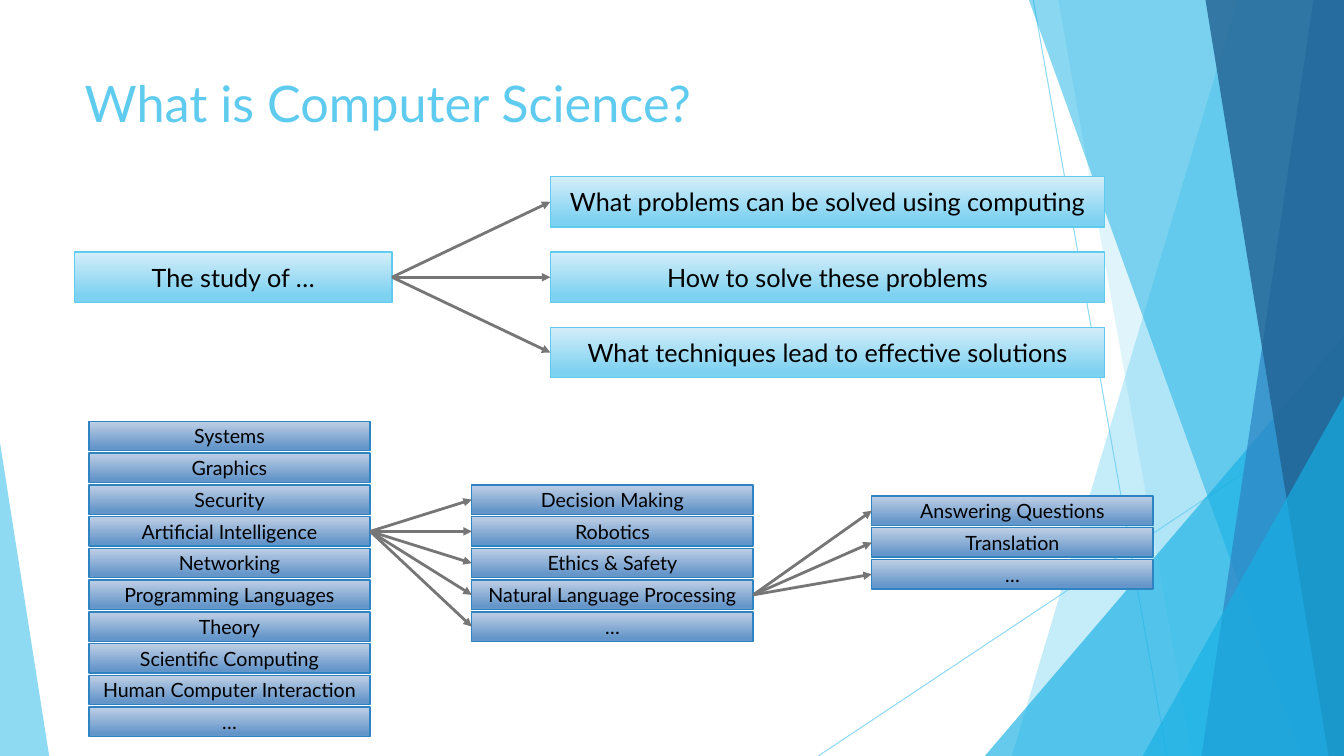
from lxml.etree import SubElement as add_sub
from pptx import Presentation
from pptx.dml.color import RGBColor
from pptx.enum.shapes import MSO_CONNECTOR as Link, MSO_SHAPE as Preset
from pptx.enum.text import MSO_ANCHOR as Anchor, PP_ALIGN as Align
from pptx.oxml.ns import qn
from pptx.util import Cm, Pt

WIDE, HIGH = 33.87, 19.05
SKY, AQUA, BLUE, NAVY = "5FCBEF", "17B0E4", "2E83C3", "226292"
rgb = RGBColor.from_string


def fade(shape, alpha):
    """Make every colour of the shape partly clear, alpha in percent."""
    for color in list(shape.element.spPr.iter(qn("a:srgbClr"))):
        add_sub(color, qn("a:alpha"), val=str(alpha * 1000))


def draw_line(start, end, color, width):
    line = shapes.add_connector(Link.STRAIGHT, *map(Cm, start + end))
    line.line.color.rgb = rgb(color)
    line.line.width = Pt(width)
    add_sub(line.element.spPr, qn("a:effectLst"))
    return line


deck = Presentation()
deck.slide_width, deck.slide_height = Cm(WIDE), Cm(HIGH)
slide = deck.slides.add_slide(deck.slide_layouts[5])
shapes = slide.shapes

# Backdrop: thin lines, then panels (top x, bottom x)
# and wedges (left, top, width, tip)
for start, end in [((26.04, 0), (29.41, HIGH)), ((WIDE, 10.24), (20.62, HIGH))]:
    fade(draw_line(start, end, SKY, 0.75), 70)

backdrop = [
    ("panel", (31.19, 25.5), SKY, 36),
    ("panel", (26.67, 30.05), SKY, 20),
    ("wedge", (24.82, 8.46, 9.05, 1), AQUA, 66),
    ("panel", (25.93, 32.79), AQUA, 50),
    ("panel", (33.1, 30.28), BLUE, 70),
    ("panel", (30.38, 33.48), NAVY, 80),
    ("wedge", (28.8, 9.98, 5.07, 1), AQUA, 66),
    ("wedge", (0, 11.15, 1.24, 0), SKY, 70),
]
for kind, place, color, alpha in backdrop:
    if kind == "panel":
        top, foot = place
        pen = shapes.build_freeform(Cm(top), 0)
        ends = [(WIDE, 0), (WIDE, HIGH), (foot, HIGH)]
        pen.add_line_segments([(Cm(x), Cm(y)) for x, y in ends])
        part = pen.convert_to_shape()
    else:
        left, top, width, tip = place
        size = map(Cm, (left, top, width, HIGH - top))
        part = shapes.add_shape(Preset.ISOSCELES_TRIANGLE, *size)
        part.adjustments[0] = tip
    part.shadow.inherit = False
    part.fill.solid()
    part.fill.fore_color.rgb = rgb(color)
    part.line.fill.background()
    fade(part, alpha)

# Title
title = shapes.title
spot = {"left": 1.88, "top": 1.7, "width": 23.88, "height": 3.66}
for key, value in spot.items():
    setattr(title, key, Cm(value))
title.text_frame.text = "What is Computer Science?"
title.text_frame.vertical_anchor = Anchor.TOP
title.text_frame.paragraphs[0].alignment = Align.LEFT
font = title.text_frame.paragraphs[0].runs[0].font
for key, value in {"name": "Lato", "size": Pt(36)}.items():
    setattr(font, key, value)
font.color.rgb = rgb(SKY)

# Box columns
light = {"high": 1.27, "step": 1.9, "size": 18,
         "line": SKY, "fade": ("D4EEF9", "7DD1F1")}
dark = {"high": 0.74, "step": 0.8, "size": 14,
        "line": BLUE, "fade": ("BFCFE5", "6596CA")}
columns = {
    "study": (light, 1.88, 6.35, 8, ["The study of …"]),
    "goals": (light, 13.87, 4.45, 13.97, [
        "What problems can be solved using computing",
        "How to solve these problems",
        "What techniques lead to effective solutions"]),
    "fields": (dark, 2.24, 10.62, 7.09, [
        "Systems", "Graphics", "Security", "Artificial Intelligence",
        "Networking", "Programming Languages", "Theory",
        "Scientific Computing", "Human Computer Interaction", "…"]),
    "topics": (dark, 11.89, 12.22, 7.09, [
        "Decision Making", "Robotics", "Ethics & Safety",
        "Natural Language Processing", "…"]),
    "tasks": (dark, 21.97, 12.5, 7.09, [
        "Answering Questions", "Translation", "…"]),
}
boxes = {}
for name, (look, left, top, width, labels) in columns.items():
    boxes[name] = []
    for row, label in enumerate(labels):
        size = map(Cm, (left, top + row * look["step"], width, look["high"]))
        box = shapes.add_shape(Preset.RECTANGLE, *size)
        box.shadow.inherit = False
        box.fill.gradient()
        box.fill.gradient_angle = 270
        for stop, color, point in zip(box.fill.gradient_stops, look["fade"], (0, 0.88)):
            stop.color.rgb = rgb(color)
            stop.position = point
        box.line.color.rgb = rgb(look["line"])
        box.line.width = Pt(1)
        frame = box.text_frame
        frame.text = label
        frame.vertical_anchor = Anchor.MIDDLE
        frame.paragraphs[0].alignment = Align.CENTER
        font = frame.paragraphs[0].runs[0].font
        for key, value in {"name": "Lato", "size": Pt(look["size"])}.items():
            setattr(font, key, value)
        font.color.rgb = rgb("000000")
        boxes[name].append(box)

# Arrows fan out from one box to each box of the next column
for name, row, goal in [("study", 0, "goals"), ("fields", 3, "topics"),
                        ("topics", 3, "tasks")]:
    for box in boxes[goal]:
        arrow = draw_line((0, 0), (1, 1), "767676", 2)
        arrow.begin_connect(boxes[name][row], 3)
        arrow.end_connect(box, 1)
        add_sub(arrow.element.spPr.find(qn("a:ln")), qn("a:tailEnd"), type="triangle")

deck.save("out.pptx")
